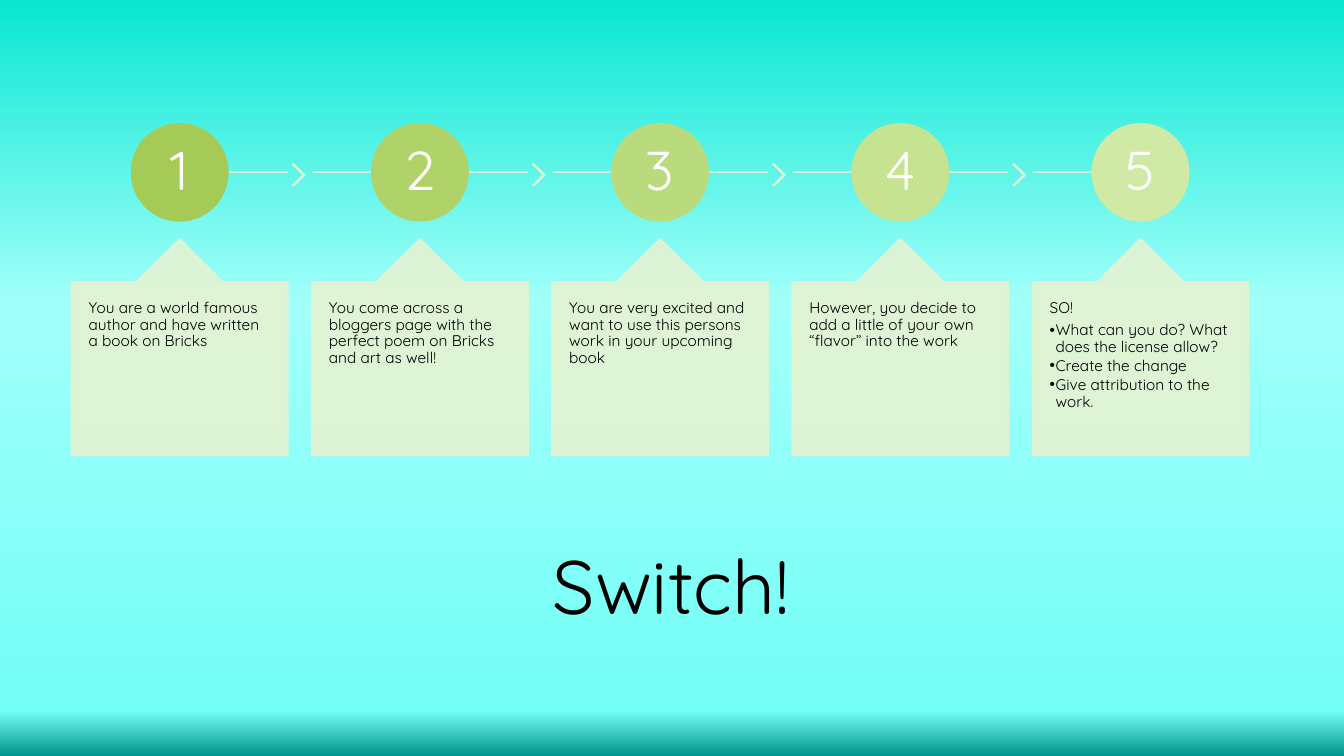
from lxml.etree import SubElement
from pptx import Presentation
from pptx.dml.color import RGBColor
from pptx.enum.shapes import MSO_CONNECTOR, MSO_SHAPE
from pptx.enum.text import MSO_ANCHOR, MSO_AUTO_SIZE, PP_ALIGN
from pptx.oxml.ns import qn
from pptx.util import Inches, Pt

SKY = [(0, "09E7D2"), (40, "A1FFFA"), (94, "73FFF7"), (100, "00948C")]
STEPS = [
    ("A5CA55", ["You are a world famous author and have written a book on Bricks"]),
    ("B0D369", ["You come across a bloggers page with the perfect poem on Bricks and art as well!"]),
    ("BADB7D", ["You are very excited and want to use this persons work in your upcoming book"]),
    ("C5E391", ["However, you decide to add a little of your own “flavor” into the work"]),
    ("D0EAA6", ["SO!", "What can you do? What does the license allow?",
                "Create the change", "Give attribution to the work."]),
]
CARD_WIDTH = 0.9
BADGE_WIDTH = 0.4
CHEVRON_WIDTH = 0.05
CENTRE = CARD_WIDTH / 2


def color(code):
    return RGBColor.from_string(code)


class StepSlide:
    """Draws numbered steps on a grid of step columns and tenth-inch rows."""

    font = "Quicksand"
    ink = "000000"
    pale = "E5F3D2"
    left = 0.71
    column = 9.53 / 4
    row = 0.1

    def __init__(self, deck):
        self.slide = deck.slides.add_slide(deck.slide_layouts[1])
        self.shapes = self.slide.shapes

    def x(self, columns):
        return Inches(self.left + columns * self.column)

    def box(self, column, row, columns, rows):
        return (self.x(column), Inches(row * self.row),
                Inches(columns * self.column), Inches(rows * self.row))

    def place(self, placeholder, area):
        placeholder.left, placeholder.top, placeholder.width, placeholder.height = area

    def background(self, stops):
        fill = self.slide.background.fill
        fill.gradient()
        fill.gradient_angle = 270
        stop_list = self.slide.element.find(".//" + qn("a:gsLst"))
        for stop in list(stop_list):
            stop_list.remove(stop)
        for percent, code in stops:
            stop = SubElement(stop_list, qn("a:gs"), pos=str(percent * 1000))
            SubElement(stop, qn("a:srgbClr"), val=code)

    def soften(self, part):
        for tint in part.element.iter(qn("a:srgbClr")):
            SubElement(tint, qn("a:alpha"), val="90000")

    def block(self, preset, area, code, adjustments=()):
        block = self.shapes.add_shape(preset, *area)
        block.shadow.inherit = False
        block.fill.solid()
        block.fill.fore_color.rgb = color(code)
        block.line.color.rgb = color(code)
        block.line.width = Pt(1.25)
        for index, value in enumerate(adjustments):
            block.adjustments[index] = value
        return block

    def track(self, start, end, row):
        height = Inches(row * self.row)
        track = self.shapes.add_connector(
            MSO_CONNECTOR.STRAIGHT, self.x(start), height, self.x(end), height)
        track.line.color.rgb = color(self.pale)
        track.line.width = Pt(1.25)
        SubElement(track.element.spPr, qn("a:effectLst"))
        self.soften(track)

    def chevron(self, column):
        area = self.box(column, 16.3, CHEVRON_WIDTH, 2.1)
        self.soften(self.block(MSO_SHAPE.CHEVRON, area, self.pale, [0.9]))

    def letter(self, frame, lines, size, code, align, anchor, insets):
        frame.text = "\n".join(lines)
        frame.auto_size = MSO_AUTO_SIZE.NONE
        frame.word_wrap = True
        frame.vertical_anchor = anchor
        frame.margin_left = frame.margin_right = Inches(insets[0])
        frame.margin_top = frame.margin_bottom = Inches(insets[1])
        for paragraph in frame.paragraphs:
            paragraph.alignment = align
            paragraph.line_spacing = 0.9
            paragraph.space_before = Pt(0)
            paragraph.space_after = Pt(4)
            for run in paragraph.runs:
                run.font.name = self.font
                run.font.size = Pt(size)
                run.font.color.rgb = color(code)

    def badge(self, column, number, code):
        area = self.box(column, 12.3, BADGE_WIDTH, 9.6)
        badge = self.block(MSO_SHAPE.OVAL, area, code)
        self.letter(badge.text_frame, [str(number)], 39, "FFFFFF",
                    PP_ALIGN.CENTER, MSO_ANCHOR.MIDDLE, (0.04, 0.04))

    def card(self, column, lines):
        card = self.block(MSO_SHAPE.UP_ARROW_CALLOUT, self.box(column, 23.7, CARD_WIDTH, 21.5),
                          self.pale, [0.4, 0.2, 0.2, 0.8])
        self.soften(card)
        story = card
        if len(lines) > 1:
            story = self.slide.placeholders[1]
            self.place(story, self.box(column, 28, CARD_WIDTH, 17.2))
            card.element.addnext(story.element)
        self.letter(story.text_frame, lines, 11, self.ink,
                    PP_ALIGN.LEFT, MSO_ANCHOR.TOP, (0.17, 0.18))
        if len(lines) > 1:
            self.bullets(story.text_frame.paragraphs)

    def bullets(self, paragraphs):
        for index, paragraph in enumerate(paragraphs):
            indent = Inches(0.06) if index else 0
            if index:
                paragraph.level = 1
                paragraph.space_after = Pt(1.65)
            properties = paragraph._p.get_or_add_pPr()
            properties.set("marL", str(indent))
            properties.set("indent", str(-indent))
            if index:
                SubElement(properties, qn("a:buChar"), char="•")
            else:
                SubElement(properties, qn("a:buNone"))

    def title(self, words):
        title = self.shapes.title
        self.place(title, self.box(1.91, 52.9, 1.17, 10.1))
        self.letter(title.text_frame, [words], 54, self.ink,
                    PP_ALIGN.CENTER, MSO_ANCHOR.MIDDLE, (0.1, 0.05))
        title.text_frame.word_wrap = False
        title.text_frame.paragraphs[0].line_spacing = 1.0
        title.text_frame.paragraphs[0].space_after = Pt(0)


def main():
    deck = Presentation()
    deck.slide_width, deck.slide_height = Inches(13.33), Inches(7.5)
    page = StepSlide(deck)
    page.background(SKY)
    last = len(STEPS) - 1
    for step, (code, lines) in enumerate(STEPS):
        start = step if step else CENTRE
        end = step + (CARD_WIDTH if step < last else CENTRE)
        page.track(start, end, 17.1)
        if step < last:
            page.chevron(step + 0.92)
        page.badge(step + CENTRE - BADGE_WIDTH / 2, step + 1, code)
        page.card(step, lines)
    page.title("Switch!")
    deck.save("out.pptx")


if __name__ == "__main__":
    main()
